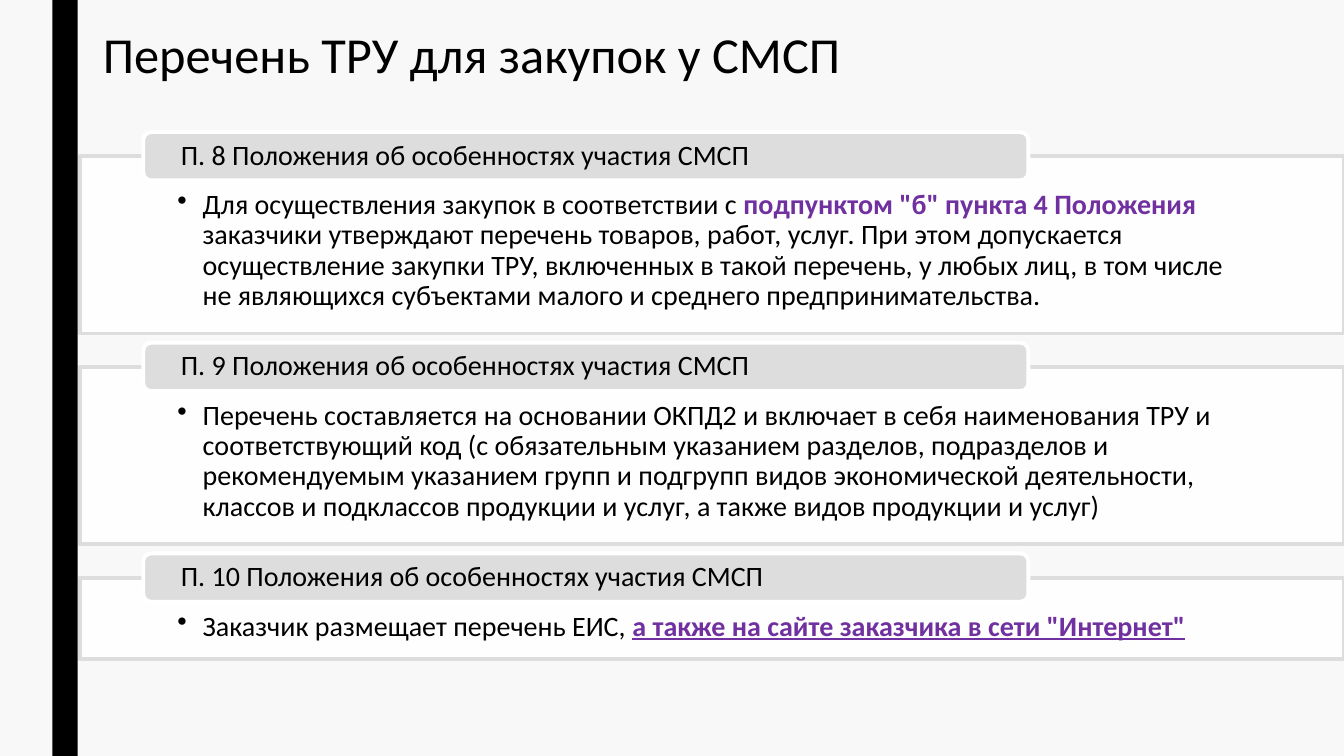
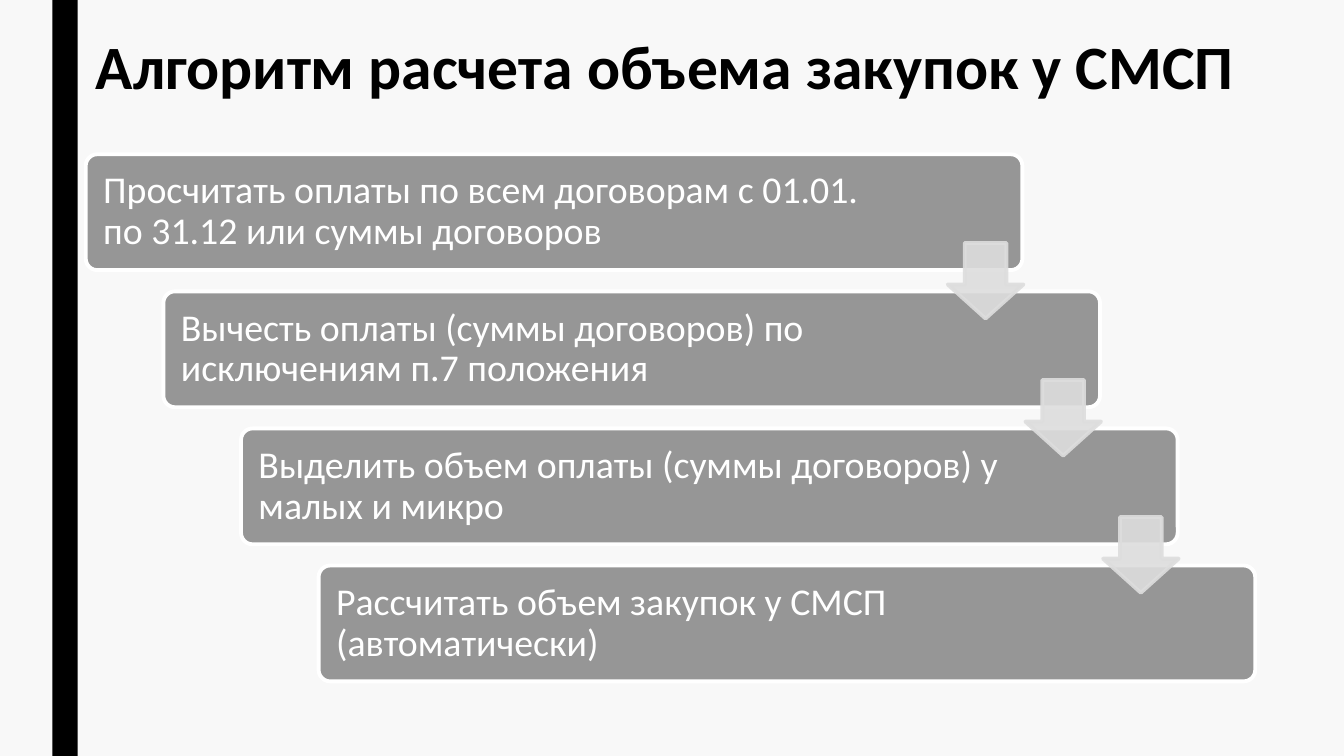
"""Build two slides on procurement from small and medium enterprises."""
import pptx
import pptx.dml.color
import pptx.enum.shapes
import pptx.enum.text
import pptx.oxml
import pptx.oxml.ns
import pptx.util
from pptx.util import Inches

COLORS = {
    "background": "F8F8F8",
    "black": "000000",
    "white": "FFFFFF",
    "light": "DDDDDD",
    "gray": "969696",
    "accent": "7030A0",
}
SHAPES = pptx.enum.shapes.MSO_SHAPE
ANCHORS = pptx.enum.text.MSO_ANCHOR
LEFT = pptx.enum.text.PP_ALIGN.LEFT
NO_FIT = pptx.enum.text.MSO_AUTO_SIZE.NONE

PROVISIONS = [
    ("П. 8 Положения об особенностях участия СМСП", 1.76, [
        ("Для осуществления закупок в соответствии с ", {}),
        ('подпунктом "б" пункта 4 Положения ', {"color": "accent", "bold": True}),
        ("заказчики утверждают перечень товаров, работ, услуг. При этом допускается "
         "осуществление закупки ТРУ, включенных в такой перечень, у любых лиц, в том числе "
         "не являющихся субъектами малого и среднего предпринимательства.", {}),
    ]),
    ("П. 9 Положения об особенностях участия СМСП", 1.76, [
        ("Перечень составляется на основании ОКПД2 и включает в себя наименования ТРУ и "
         "соответствующий код (с обязательным указанием разделов, подразделов и "
         "рекомендуемым указанием групп и подгрупп видов экономической деятельности, "
         "классов и подклассов продукции и услуг, а также видов продукции и услуг)", {}),
    ]),
    ("П. 10 Положения об особенностях участия СМСП", 0.81, [
        ("Заказчик размещает перечень ЕИС, ", {}),
        ('а также на сайте заказчика в сети "Интернет"',
         {"color": "accent", "bold": True, "underline": True}),
    ]),
]
STEPS = [
    "Просчитать оплаты по всем договорам с 01.01. по 31.12 или суммы договоров",
    "Вычесть оплаты (суммы договоров) по исключениям п.7 положения",
    "Выделить объем оплаты (суммы договоров) у малых и микро",
    "Рассчитать объем закупок у СМСП (автоматически)",
]


def set_all(target, values):
    """Set every attribute named in a dict."""
    for name, value in values.items():
        setattr(target, name, value)


def paint(color_format, color, opacity=100):
    """Apply a palette colour with an optional opacity in percent."""
    color_format.rgb = pptx.dml.color.RGBColor.from_string(COLORS[color])
    if opacity < 100:
        element = color_format._xFill.find(pptx.oxml.ns.qn("a:srgbClr"))
        alpha = pptx.oxml.parse_xml(
            f'<a:alpha {pptx.oxml.ns.nsdecls("a")} val="{opacity * 1000}"/>')
        element.append(alpha)


class Deck:
    """Hold the shared style and the current slide."""

    font = "Calibri"
    line_width = 2.75

    def __init__(self):
        """Start a widescreen presentation with a shared background."""
        self.presentation = pptx.Presentation()
        set_all(self.presentation,
                {"slide_width": Inches(13.33), "slide_height": Inches(7.5)})
        fill = self.presentation.slide_master.background.fill
        fill.solid()
        paint(fill.fore_color, "background")
        self.slide = None

    def add_slide(self, title, box, size, bold=False):
        """Add a slide with its title and side band."""
        layout = self.presentation.slide_layouts.get_by_name("Title Only")
        self.slide = self.presentation.slides.add_slide(layout)
        placeholder = self.slide.shapes.title
        names = ("left", "top", "width", "height")
        set_all(placeholder, dict(zip(names, map(Inches, box))))
        self.set_text(placeholder, [(title, {"bold": bold})], size,
                      (0.1, 0.05, 0.1, 0.05), anchor=ANCHORS.TOP)
        self.add_shape(SHAPES.RECTANGLE, (0.52, 0, 0.25, 7.5), "black")

    def add_shape(self, kind, box, fill, line=None, adjustments=(),
                  fill_opacity=100, line_opacity=100):
        """Add a preset shape without a shadow."""
        shape = self.slide.shapes.add_shape(kind, *map(Inches, box))
        shape.shadow.inherit = False
        shape.fill.solid()
        paint(shape.fill.fore_color, fill, fill_opacity)
        if line:
            shape.line.width = pptx.util.Pt(self.line_width)
            shape.line.fill.solid()
            paint(shape.line.color, line, line_opacity)
        else:
            shape.line.fill.background()
        for index, value in enumerate(adjustments):
            shape.adjustments[index] = value
        return shape

    def set_text(self, shape, runs, size, insets, color="black",
                 anchor=ANCHORS.MIDDLE, bullet=False):
        """Fill a shape with one left-aligned paragraph of formatted runs."""
        frame = shape.text_frame
        names = ("margin_left", "margin_top", "margin_right", "margin_bottom")
        set_all(frame, dict(zip(names, map(Inches, insets))))
        set_all(frame, {"word_wrap": True, "auto_size": NO_FIT, "vertical_anchor": anchor})
        paragraph = frame.paragraphs[0]
        set_all(paragraph, {"alignment": LEFT, "line_spacing": 0.9})
        if bullet:
            self.add_bullet(paragraph)
        for text, formats in runs:
            run = paragraph.add_run()
            run.text = text
            values = {"name": self.font, "size": pptx.util.Pt(size), "bold": False, **formats}
            paint(run.font.color, values.pop("color", color))
            set_all(run.font, values)

    def add_bullet(self, paragraph):
        """Give a paragraph a round bullet with a hanging indent."""
        properties = paragraph._p.get_or_add_pPr()
        properties.set("marL", str(Inches(0.25)))
        properties.set("indent", str(Inches(-0.25)))
        properties.append(pptx.oxml.parse_xml(
            f'<a:buChar {pptx.oxml.ns.nsdecls("a")} char="•"/>'))

    def add_provision(self, heading, runs, top, height):
        """Add a bordered panel with a heading tab on its upper edge."""
        panel = self.add_shape(SHAPES.RECTANGLE, (0.79, top, 12.54, height),
                               "white", "light", fill_opacity=90)
        self.set_text(panel, runs, 20, (0.97, 0.34, 0.97, 0.16),
                      anchor=ANCHORS.TOP, bullet=True)
        tab = self.add_shape(SHAPES.ROUNDED_RECTANGLE, (1.42, top - 0.24, 8.78, 0.48),
                             "light", "white")
        self.set_text(tab, [(heading, {})], 20, (0.35, 0, 0.35, 0))

    def add_step(self, text, left, top):
        """Add one step of the staircase."""
        step = self.add_shape(SHAPES.ROUNDED_RECTANGLE, (left, top, 9.29, 1.15),
                              "gray", "white", (0.1,))
        self.set_text(step, [(text, {})], 27, (0.14, 0.14, 1.41, 0.14), "white")

    def add_step_arrow(self, left, top):
        """Add a translucent arrow to the next step."""
        self.add_shape(SHAPES.DOWN_ARROW, (left, top, 0.75, 0.75), "light", "light",
                       (0.55, 0.45), fill_opacity=90, line_opacity=90)


def main():
    """Build both slides and save the presentation."""
    deck = Deck()

    deck.add_slide("Перечень ТРУ для закупок у СМСП", (0.92, 0.25, 11.56, 0.72), 36)
    top = 1.55
    for heading, height, runs in PROVISIONS:
        deck.add_provision(heading, runs, top, height)
        top += height + 0.33

    deck.add_slide("Алгоритм расчета объема закупок у СМСП",
                   (0.85, 0.31, 12.48, 0.83), 44, bold=True)
    corners = [(0.85 + 0.77 * index, 1.53 + 1.36 * index) for index in range(len(STEPS))]
    for text, (left, top) in zip(STEPS, corners):
        deck.add_step(text, left, top)
    for left, top in corners[:-1]:
        deck.add_step_arrow(left + 8.55, top + 0.88)

    deck.presentation.save("out.pptx")


if __name__ == "__main__":
    main()
